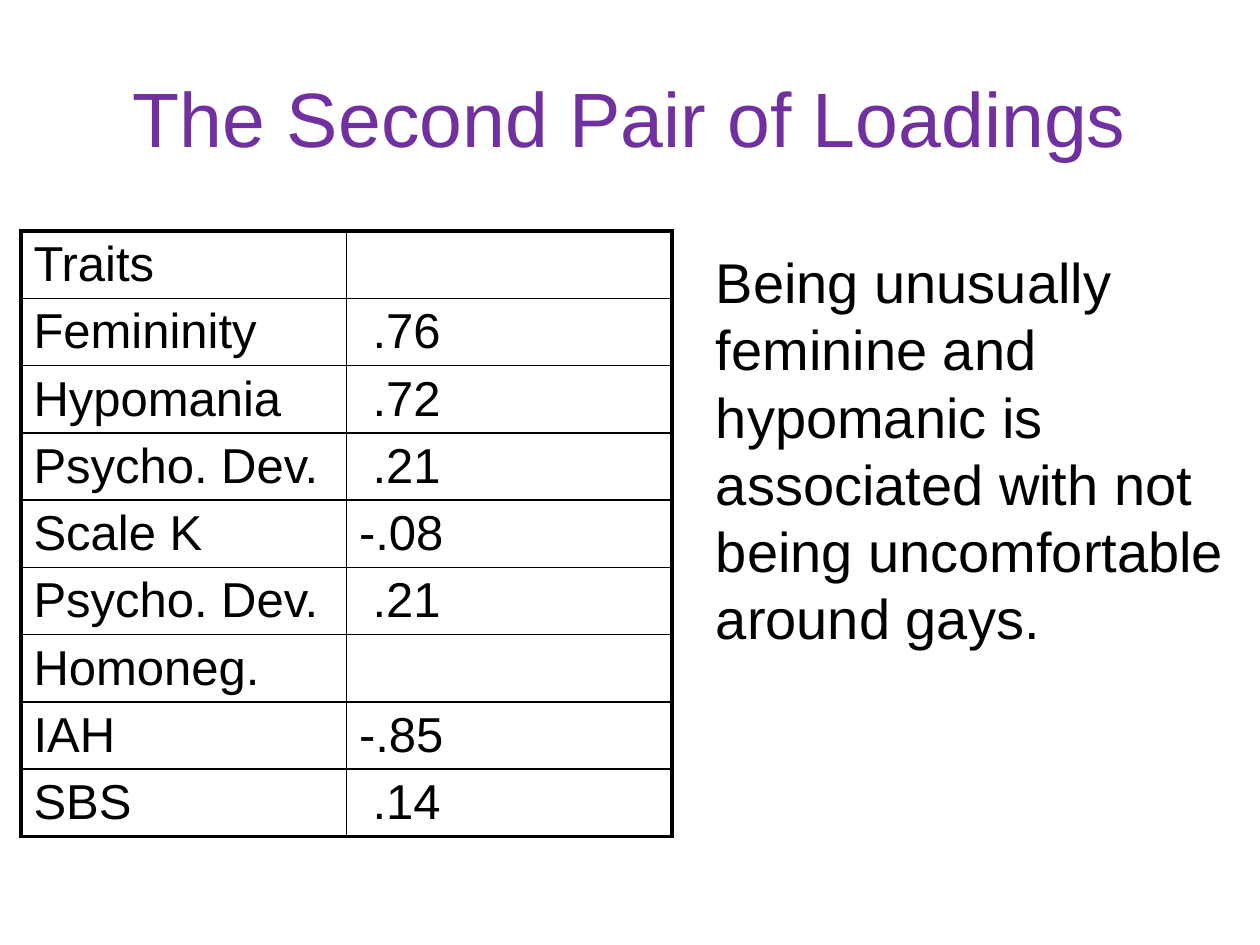
from dataclasses import dataclass

from lxml.etree import SubElement
from pptx import Presentation
from pptx.dml.color import RGBColor
from pptx.enum.text import MSO_ANCHOR, PP_ALIGN
from pptx.oxml.ns import qn
from pptx.slide import Slide
from pptx.util import Pt

BLACK = RGBColor(0x00, 0x00, 0x00)
PURPLE = RGBColor(0x70, 0x30, 0xA0)

LOADINGS = [
    ("Traits", ""),
    ("Femininity", " .76"),
    ("Hypomania", " .72"),
    ("Psycho. Dev.", " .21"),
    ("Scale K", "-.08"),
    ("Psycho. Dev.", " .21"),
    ("Homoneg.", ""),
    ("IAH", "-.85"),
    ("SBS", " .14"),
]


@dataclass
class SlideWriter:
    page: Slide
    font: str = "Arial"
    outer_line: float = 2.25
    inner_line: float = 1

    def format_runs(self, para, size, color=BLACK):
        for span in para.runs:
            span.font.name = self.font
            span.font.size = Pt(size)
            span.font.color.rgb = color

    def title(self, text, left, top, width, height):
        box = self.page.shapes.title
        box.left, box.top, box.width, box.height = map(Pt, (left, top, width, height))
        frame = box.text_frame
        frame.text = text
        frame.vertical_anchor = MSO_ANCHOR.MIDDLE
        frame.paragraphs[0].alignment = PP_ALIGN.CENTER
        self.format_runs(frame.paragraphs[0], 44, PURPLE)

    def text(self, text, left, top, width, height, size):
        box = self.page.shapes.add_textbox(*map(Pt, (left, top, width, height)))
        box.text_frame.word_wrap = True
        box.text_frame.text = text
        para = box.text_frame.paragraphs[0]
        para.line_spacing = Pt(1.2 * size)
        self.format_runs(para, size)

    def table(self, rows, left, top, column_width, row_height, size):
        row_count, column_count = len(rows), len(rows[0])
        table = self.page.shapes.add_table(
            row_count, column_count, Pt(left), Pt(top),
            Pt(column_width * column_count), Pt(row_height * row_count),
        ).table
        table.first_row = table.horz_banding = False
        for i, row in enumerate(rows):
            for j, value in enumerate(row):
                cell = table.cell(i, j)
                if value:
                    cell.text = value
                    self.format_runs(cell.text_frame.paragraphs[0], size)
                self.borders(cell, {
                    "L": j == 0,
                    "R": j == column_count - 1,
                    "T": i == 0,
                    "B": i == row_count - 1,
                })
                cell.fill.background()

    def borders(self, cell, outer_sides):
        """Draw each side of a cell, thicker where it lies on the table's edge."""
        properties = cell._tc.get_or_add_tcPr()
        for side, is_outer in outer_sides.items():
            width = Pt(self.outer_line if is_outer else self.inner_line)
            line = SubElement(properties, qn(f"a:ln{side}"), w=str(width))
            fill = SubElement(line, qn("a:solidFill"))
            SubElement(fill, qn("a:srgbClr"), val=str(BLACK))


def main():
    deck = Presentation()
    deck.slide_width, deck.slide_height = Pt(720), Pt(540)
    writer = SlideWriter(deck.slides.add_slide(deck.slide_layouts[5]))
    writer.title("The Second Pair of Loadings", 36, 21.6, 648, 90)
    writer.table(LOADINGS, 12, 132, column_width=186, row_height=38.4, size=28)
    writer.text(
        "Being unusually feminine and hypomanic is associated with "
        "not being uncomfortable around gays.",
        402, 138, 318, 237.6, size=32,
    )
    deck.save("out.pptx")


if __name__ == "__main__":
    main()
